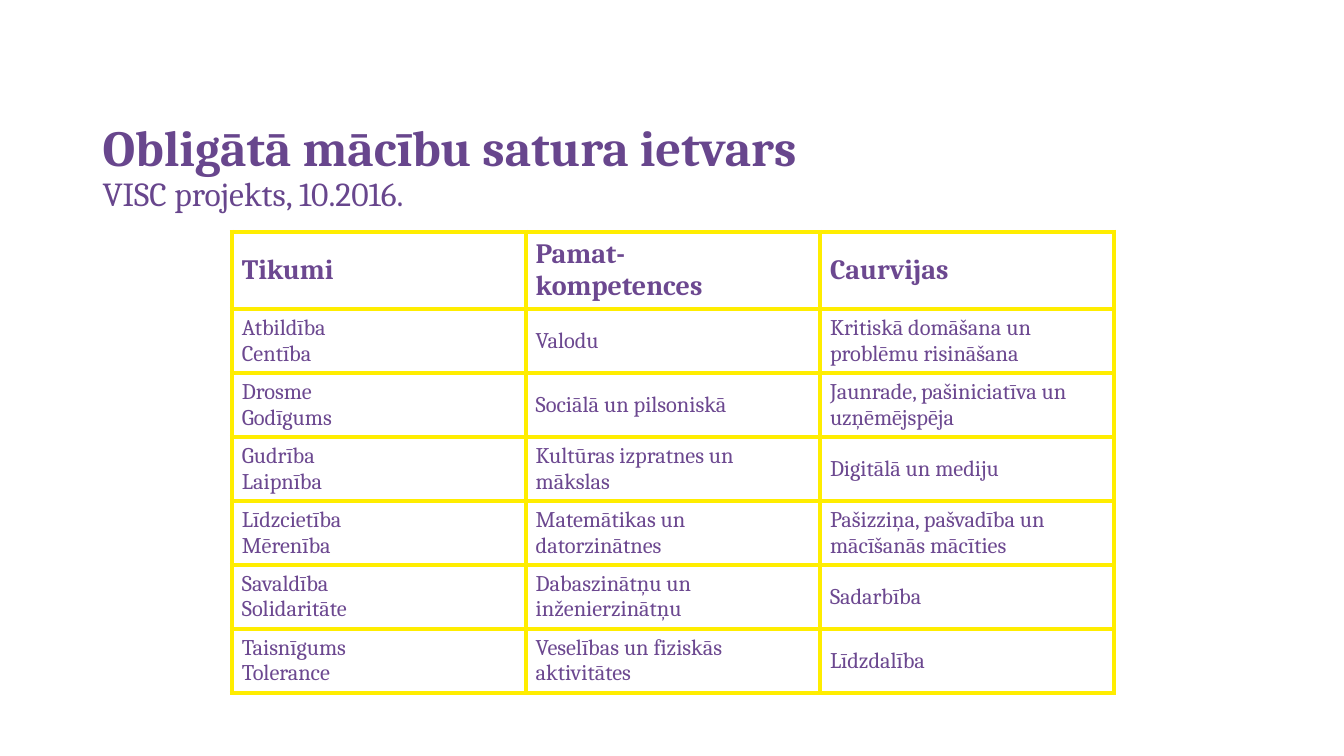
from lxml import etree
from pptx import Presentation
from pptx.dml.color import RGBColor
from pptx.enum.text import MSO_ANCHOR
from pptx.oxml.ns import qn
from pptx.util import Pt

TOP, MIDDLE = MSO_ANCHOR.TOP, MSO_ANCHOR.MIDDLE
FONT = "Cambria"
TITLE_COLOR, TABLE_COLOR, BORDER_COLOR = "68468D", "6C4890", "FFED00"

COL_WIDTHS = [209.9, 210.2, 209.9]
ROW_HEIGHTS = [53, 44.3, 44.3] + [45.7] * 4
# Each newline starts a new paragraph in its cell
ROWS = [
    ("Tikumi", "Pamat-\nkompetences", "Caurvijas"),
    ("Atbildība\nCentība", "Valodu", "Kritiskā domāšana un problēmu risināšana"),
    ("Drosme\nGodīgums", "Sociālā un pilsoniskā", "Jaunrade, pašiniciatīva un uzņēmējspēja"),
    ("Gudrība\nLaipnība", "Kultūras izpratnes un mākslas", "Digitālā un mediju"),
    ("Līdzcietība\nMērenība", "Matemātikas un datorzinātnes",
     "Pašizziņa, pašvadība un mācīšanās mācīties"),
    ("Savaldība\nSolidaritāte", "Dabaszinātņu un inženierzinātņu", "Sadarbība"),
    ("Taisnīgums\nTolerance", "Veselības un fiziskās aktivitātes", "Līdzdalība"),
]


def rgb(color):
    return RGBColor.from_string(color)


def add_title(s, left, top, width, height, title, subtitle):
    tf = s.shapes.add_textbox(Pt(left), Pt(top), Pt(width), Pt(height)).text_frame
    tf.word_wrap = True
    tf.vertical_anchor = TOP
    p = tf.paragraphs[0]
    p.line_spacing = 0.9
    p.font.name = FONT
    p.font.color.rgb = rgb(TITLE_COLOR)
    r = p.add_run()
    r.text = title
    r.font.size, r.font.bold = Pt(36), True
    p.add_line_break()
    r = p.add_run()
    r.text = subtitle
    r.font.size, r.font.bold = Pt(24), False


def set_borders(cell, color, width):
    tcPr = cell._tc.get_or_add_tcPr()
    for side in ("a:lnL", "a:lnR", "a:lnT", "a:lnB"):
        ln = etree.SubElement(tcPr, qn(side), w=str(Pt(width)))
        fill = etree.SubElement(ln, qn("a:solidFill"))
        etree.SubElement(fill, qn("a:srgbClr"), val=color)


def fill_cell(cell, text, size, bold):
    set_borders(cell, BORDER_COLOR, 3)
    cell.fill.background()
    cell.vertical_anchor = MIDDLE
    cell.text = text
    for p in cell.text_frame.paragraphs:
        p.font.name = FONT
        p.font.size = Pt(size)
        p.font.bold = bold
        p.font.color.rgb = rgb(TABLE_COLOR)


def add_grid(s, left, top):
    table = s.shapes.add_table(len(ROWS), len(COL_WIDTHS), Pt(left), Pt(top),
                               Pt(sum(COL_WIDTHS)), Pt(sum(ROW_HEIGHTS))).table
    table.first_row = table.horz_banding = False
    for column, width in zip(table.columns, COL_WIDTHS):
        column.width = Pt(width)
    for i, (row, height, texts) in enumerate(zip(table.rows, ROW_HEIGHTS, ROWS)):
        row.height = Pt(height)
        for cell, text in zip(row.cells, texts):
            fill_cell(cell, text, 20 if i == 0 else 16, i == 0)


def main():
    prs = Presentation()
    prs.slide_width, prs.slide_height = Pt(960), Pt(540)
    s = prs.slides.add_slide(prs.slide_layouts[6])

    # Heading
    add_title(s, 66.2, 84.2, 774, 100,
              "Obligātā mācību satura ietvars", "VISC projekts, 10.2016.")

    # Content framework
    add_grid(s, 165.6, 165.6)

    prs.save("out.pptx")


if __name__ == "__main__":
    main()
